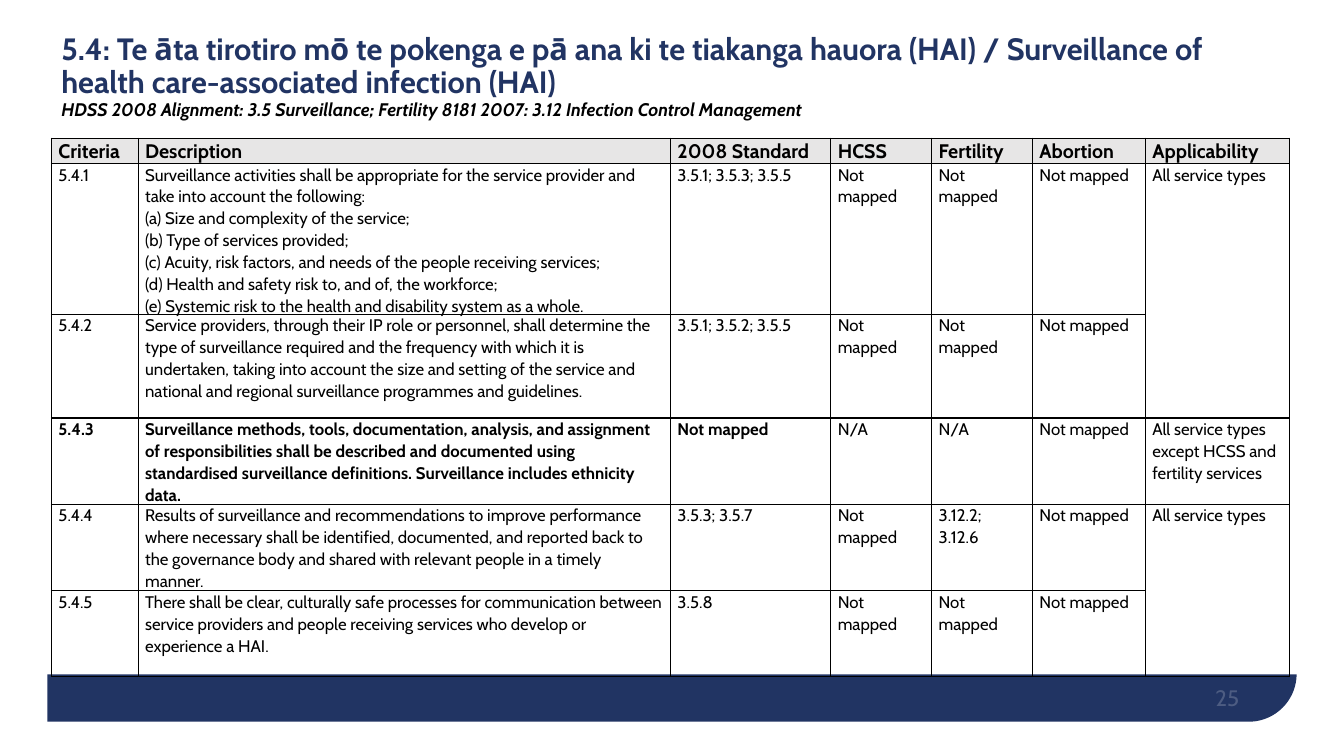
"""Build the surveillance criteria slide for section 5.4."""
from dataclasses import dataclass

from lxml import etree
from pptx import Presentation
from pptx import util as u
from pptx.dml import color
from pptx.enum import shapes, text
from pptx.oxml import ns

COLUMNS, ROWS = 1333, 750
CELL = u.Inches(0.01)
FONT = "Cabin"
NAVY, BLACK, WHITE, GREY = "213463", "000000", "FFFFFF", "E7E6E6"
NOT_MAPPED = "Not mapped"
ALL_TYPES = "All service types"


@dataclass(frozen=True)
class Area:
    column: float
    row: float
    columns: float
    rows: float

    def lengths(self) -> list[int]:
        return [round(n * CELL) for n in (self.column, self.row, self.columns, self.rows)]


@dataclass(frozen=True)
class Band:
    area: Area
    kind: shapes.MSO_SHAPE
    fill: str
    flipped: bool = False


@dataclass(frozen=True)
class Criterion:
    number: str
    description: str
    standard: str
    hcss: str
    fertility: str
    applicability: str = ""
    rows: int = 85
    strong: bool = False

    def texts(self) -> list[str]:
        return [self.number, self.description, self.standard, self.hcss,
                self.fertility, NOT_MAPPED, self.applicability]


BANDS = [
    Band(Area(47, 37, 1239, 679), shapes.MSO_SHAPE.ROUND_1_RECTANGLE, NAVY, True),
    Band(Area(0, 0, COLUMNS, 669), shapes.MSO_SHAPE.RECTANGLE, WHITE),
]
TITLE = ("5.4:\u00a0Te āta tirotiro mō te pokenga e pā ana ki te tiakanga hauora (HAI) / "
         "Surveillance of health care-associated infection (HAI)")
ALIGNMENT = ("HDSS 2008 Alignment: 3.5 Surveillance; "
             "Fertility 8181 2007: 3.12 Infection Control Management")
HEADINGS = ["Criteria", "Description", "2008 Standard", "HCSS", "Fertility",
            "Abortion", "Applicability"]
WIDTHS = [86, 528, 159, 100, 100, 112, 143]
HEADING_ROWS = 23
CRITERIA = [
    Criterion("5.4.1", "\v".join([
        "Surveillance activities shall be appropriate for the service provider and "
        "take into account the following:",
        "(a) Size and complexity of the service;",
        "(b) Type of services provided;",
        "(c) Acuity, risk factors, and needs of the people receiving services;",
        "(d) Health and safety risk to, and of, the workforce;",
        "(e) Systemic risk to the health and disability system as a whole.",
    ]), "3.5.1; 3.5.3; 3.5.5", NOT_MAPPED, NOT_MAPPED, ALL_TYPES, rows=149),
    Criterion("5.4.2",
              "Service providers, through their IP role or personnel, shall determine the "
              "type of surveillance required and the frequency with which it is undertaken, "
              "taking into account the size and setting of the service and national and "
              "regional surveillance programmes and guidelines.",
              "3.5.1; 3.5.2; 3.5.5", NOT_MAPPED, NOT_MAPPED, rows=103),
    Criterion("5.4.3",
              "Surveillance methods, tools, documentation, analysis, and assignment of "
              "responsibilities shall be described and documented using standardised "
              "surveillance definitions. Surveillance includes ethnicity data.",
              NOT_MAPPED, "N/A", "N/A",
              "All service types except HCSS and fertility services", strong=True),
    Criterion("5.4.4",
              "Results of surveillance and recommendations to improve performance where "
              "necessary shall be identified, documented, and reported back to the "
              "governance body and shared with relevant people in a timely manner.",
              "3.5.3; 3.5.7", NOT_MAPPED, "3.12.2; 3.12.6", ALL_TYPES),
    Criterion("5.4.5",
              "There shall be clear, culturally safe processes for communication between "
              "service providers and people receiving services who develop or experience "
              "a HAI.", "3.5.8", NOT_MAPPED, NOT_MAPPED),
]


def paint(target, colour: str) -> None:
    target.solid()
    target.fore_color.rgb = color.RGBColor.from_string(colour)


def style(span, size: float, colour: str, bold: bool = False, italic: bool = False) -> None:
    span.font.name, span.font.size = FONT, u.Pt(size)
    span.font.bold, span.font.italic = bold, italic
    paint(span.font.fill, colour)


def draw_band(page, band: Band) -> None:
    shape = page.shapes.add_shape(band.kind, *band.area.lengths())
    shape.shadow.inherit = False
    paint(shape.fill, band.fill)
    shape.line.fill.background()
    if band.flipped:
        shape.adjustments[0] = 0.07 
        shape.rotation = 180
        shape._element.spPr.find(ns.qn("a:xfrm")).set("flipH", "1")


def draw_text(page, area: Area, words: str, anchor: text.MSO_ANCHOR):
    frame = page.shapes.add_textbox(*area.lengths()).text_frame
    frame.word_wrap = True
    frame.vertical_anchor = anchor
    frame.text = words
    return frame


def draw_title(page) -> None:
    frame = draw_text(page, Area(51, 16, 1228, 121), f"{TITLE}\v{ALIGNMENT}",
                      text.MSO_ANCHOR.MIDDLE)
    para = frame.paragraphs[0]
    para.line_spacing = 0.9
    heading, alignment = para.runs
    style(heading, 22, NAVY, bold=True)
    style(alignment, 13, BLACK, bold=True, italic=True)


def draw_number(page) -> None:
    frame = draw_text(page, Area(929, 665, 300, 40), "25", text.MSO_ANCHOR.BOTTOM)
    frame.margin_left = frame.margin_right = frame.margin_top = frame.margin_bottom = 0
    para = frame.paragraphs[0]
    para.alignment = text.PP_ALIGN.RIGHT
    style(para.runs[0], 16, WHITE)
    tint = para.runs[0]._r.rPr.find(".//" + ns.qn("a:srgbClr"))
    etree.SubElement(tint, ns.qn("a:alpha"), val="20000")


def border(cell) -> None:
    properties = cell._tc.get_or_add_tcPr()
    for side in ("a:lnL", "a:lnR", "a:lnT", "a:lnB"):
        line = etree.SubElement(properties, ns.qn(side), w=str(u.Pt(1)))
        fill = etree.SubElement(line, ns.qn("a:solidFill"))
        etree.SubElement(fill, ns.qn("a:srgbClr"), val=BLACK)


def fill_cell(cell, words: str, size: float, bold: bool, fill: str = "") -> None:
    border(cell)
    if fill:
        paint(cell.fill, fill)
    else:
        cell.fill.background()
    cell.margin_left = cell.margin_right = u.Inches(0.07)
    cell.margin_top = cell.margin_bottom = 0
    cell.text_frame.text = words
    para = cell.text_frame.paragraphs[0]
    para.line_spacing = 1.07
    para.font.size = u.Pt(size)
    for span in para.runs:
        style(span, size, BLACK, bold)


def draw_table(page) -> None:
    heights = [HEADING_ROWS] + [criterion.rows for criterion in CRITERIA]
    area = Area(51, 137, sum(WIDTHS), sum(heights))
    table = page.shapes.add_table(len(heights), len(WIDTHS), *area.lengths()).table
    table.first_row = table.horz_banding = False
    for column, width in zip(table.columns, WIDTHS):
        column.width = width * CELL
    for row, height in zip(table.rows, heights):
        row.height = height * CELL
    for index, heading in enumerate(HEADINGS):
        fill_cell(table.cell(0, index), heading, 14, True, GREY)
    last = len(WIDTHS) - 1
    for number, criterion in enumerate(CRITERIA, start=1):
        for index, words in enumerate(criterion.texts()):
            fill_cell(table.cell(number, index), words, 12, criterion.strong and index < 3)
        if not criterion.applicability:
            table.cell(number - 1, last).merge(table.cell(number, last))


def main() -> None:
    deck = Presentation()
    deck.slide_width, deck.slide_height = COLUMNS * CELL, ROWS * CELL
    page = deck.slides.add_slide(deck.slide_layouts[6])
    for band in BANDS:
        draw_band(page, band)
    draw_number(page)
    draw_title(page)
    draw_table(page)
    deck.save("out.pptx")


if __name__ == "__main__":
    main()
